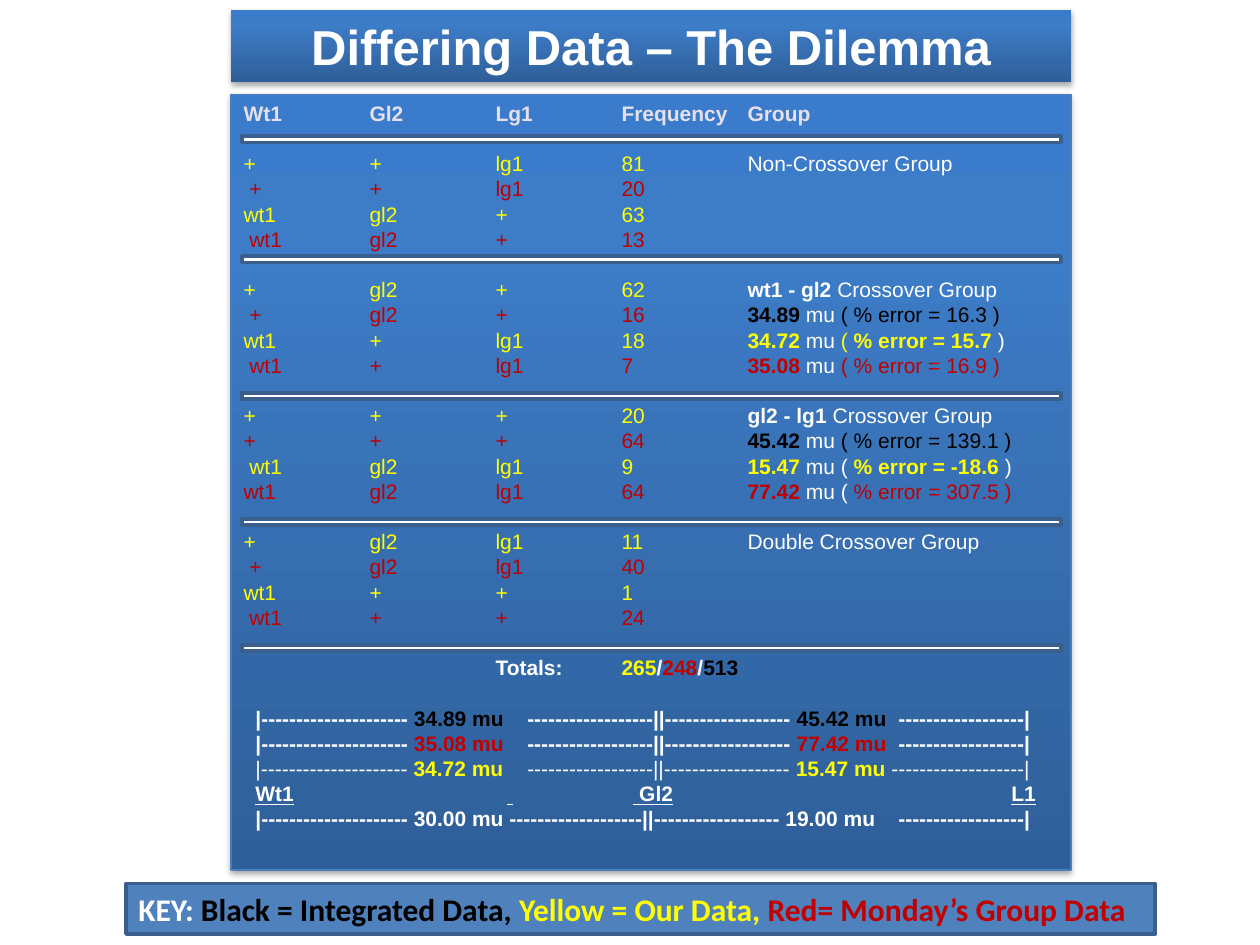
from copy import deepcopy
from lxml.etree import SubElement
from pptx import Presentation
from pptx.dml.color import RGBColor
from pptx.enum.shapes import MSO_SHAPE
from pptx.enum.text import MSO_ANCHOR, PP_ALIGN
from pptx.oxml.ns import qn
from pptx.util import Cm, Pt

WHITE = RGBColor(0xFF, 0xFF, 0xFF)
BLACK = RGBColor(0, 0, 0)
YELLOW = RGBColor(0xFF, 0xFF, 0)
RED = RGBColor(0xC0, 0, 0)
LAVENDER = RGBColor(0xE6, 0xE0, 0xEC)
BLUE = RGBColor(0x4F, 0x81, 0xBD)
EDGE = RGBColor(0x4B, 0x7E, 0xBC)
NAVY = RGBColor(0x3A, 0x5F, 0x8C)
GRADIENT = [(0, RGBColor(0x2F, 0x5F, 0x99)), (0.8, RGBColor(0x3D, 0x7C, 0xC7)),
            (1, RGBColor(0x3A, 0x7C, 0xCB))]

COLUMN_TABS = [2.54, 5.08, 7.62, 10.16]
MAP_TABS = [5.48, 12.96]
LINE_PITCH = Pt(14.4)


def add_span(para, text, color=WHITE, bold=False, underline=False, size=12, font="Arial"):
    span = para.add_run()
    span.text = text
    span.font.size, span.font.name = Pt(size), font
    span.font.bold, span.font.underline = bold, underline
    span.font.color.rgb = color


class Page:
    """Holds the current slide and the look of its elements."""

    def __init__(self, deck):
        self.slide = deck.slides.add_slide(deck.slide_layouts[6])

    def box(self, left, top, width, height, fill=None, line=None, line_width=2):
        box = self.slide.shapes.add_shape(
            MSO_SHAPE.RECTANGLE, Cm(left), Cm(top), Cm(width), Cm(height))
        box.shadow.inherit = False
        if fill is None:
            self.shade(box)
        else:
            box.fill.solid()
            box.fill.fore_color.rgb = fill
        if line is None:
            box.line.fill.background()
        else:
            box.line.color.rgb = line
            box.line.width = Pt(line_width)
        box.text_frame.word_wrap = True
        return box

    def shade(self, box):
        """Blue vertical gradient with a soft shadow below."""
        box.fill.gradient()
        box.fill.gradient_angle = 90
        properties = box._element.spPr
        stop_list = properties.find(".//" + qn("a:gsLst"))
        stop_list.append(deepcopy(stop_list[-1]))
        for stop, (position, color) in zip(box.fill.gradient_stops, GRADIENT):
            stop.position = position
            stop.color.rgb = color
        shadow = SubElement(properties.find(qn("a:effectLst")), qn("a:outerShdw"),
                            blurRad=str(Pt(3.1)), dist=str(Pt(1.8)),
                            dir="5400000", rotWithShape="0")
        color = SubElement(shadow, qn("a:srgbClr"), val="000000")
        SubElement(color, qn("a:alpha"), val="35000")

    def rule(self, top):
        self.box(4.88, top, 16.51, 0.13, WHITE, NAVY)

    def line(self, box, spans, tabs=(), align=PP_ALIGN.LEFT, gap=False, indent=0, pitch=None):
        """Adds one paragraph; each span is a (text, format) pair."""
        frame = box.text_frame
        first = not frame.paragraphs[0].runs
        para = frame.paragraphs[0] if first else frame.add_paragraph()
        para.alignment = align
        if pitch:
            para.line_spacing = pitch
        if gap:
            para.space_before = pitch
        properties = para._p.get_or_add_pPr()
        properties.set("marL", str(Cm(indent)))
        if tabs:
            tab_list = SubElement(properties, qn("a:tabLst"))
            for tab in tabs:
                SubElement(tab_list, qn("a:tab"), pos=str(Cm(tab)), algn="l")
        for text, style in spans:
            add_span(para, text, **style)


def plain(text, color=WHITE):
    return text, dict(color=color)


def strong(text, color=WHITE, **style):
    return text, dict(color=color, bold=True, **style)


# Each group: four genotype rows, with the notes that stand beside them
GROUPS = [
    [("+ + lg1 81", YELLOW, [plain("Non-Crossover Group")]),
     ("_+ + lg1 20", RED, []),
     ("wt1 gl2 + 63", YELLOW, []),
     ("_wt1 gl2 + 13", RED, [])],
    [("+ gl2 + 62", YELLOW, [strong("wt1 - gl2"), plain(" Crossover Group")]),
     ("_+ gl2 + 16", RED, [strong("34.89", BLACK), plain(" mu "),
                           plain("( % error = 16.3 )", BLACK)]),
     ("wt1 + lg1 18", YELLOW, [strong("34.72", YELLOW), plain(" mu "), plain("( ", YELLOW),
                               strong("% error = 15.7 ", YELLOW), plain(")")]),
     ("_wt1 + lg1 7", RED, [strong("35.08", RED), plain(" mu "),
                            plain("( % error = 16.9 )", RED)])],
    [("+ + + 20", YELLOW, [strong("gl2 - lg1"), plain(" Crossover Group")]),
     ("+ + + 64", RED, [strong("45.42", BLACK), plain(" mu "),
                        plain("( % error = 139.1 )", BLACK)]),
     ("_wt1 gl2 lg1 9", YELLOW, [strong("15.47", YELLOW), plain(" mu ( "),
                                 strong("% error = -18.6 ", YELLOW), plain(")")]),
     ("wt1 gl2 lg1 64", RED, [strong("77.42", RED), plain(" mu ( "),
                              plain("% error = 307.5 )", RED)])],
    [("+ gl2 lg1 11", YELLOW, [plain("Double Crossover Group")]),
     ("_+ gl2 lg1 40", RED, []),
     ("wt1 + + 1", YELLOW, []),
     ("_wt1 + + 24", RED, [])],
]


def map_row(first, second, color, ruler=strong, gaps="\t\t", dashes=(18, 18)):
    """One distance scale: two values set between dashed rulers."""
    return [ruler("|" + "-" * 21 + " "), strong(first + " mu", color),
            ruler(gaps[0] + "-" * dashes[0] + "||" + "-" * 18 + " "),
            strong(second + " mu", color), ruler(gaps[1] + "-" * dashes[1] + "|")]


MAP_ROWS = [
    map_row("34.89", "45.42", BLACK),
    map_row("35.08", "77.42", RED),
    map_row("34.72", "15.47", YELLOW, ruler=plain, gaps="\t ", dashes=(18, 19)),
    [strong("Wt1\t\t \t Gl2\t\t\tL1", underline=True)],
    map_row("30.00", "19.00", WHITE, gaps=" \t", dashes=(19, 18)),
]


def main():
    deck = Presentation()
    deck.slide_width, deck.slide_height = Cm(25.4), Cm(19.05)
    page = Page(deck)

    # Title
    title = page.box(4.66, 0.2, 16.93, 1.45)
    page.line(title, [strong("Differing Data – The Dilemma", size=28)], align=PP_ALIGN.CENTER)

    # Data panel
    panel = page.box(4.66, 1.9, 16.93, 15.64, line=EDGE, line_width=0.75)
    panel.text_frame.vertical_anchor = MSO_ANCHOR.TOP
    columns = dict(tabs=COLUMN_TABS, pitch=LINE_PITCH)
    page.line(panel, [strong("Wt1\tGl2\tLg1\tFrequency\tGroup", LAVENDER)], **columns)
    for group in GROUPS:
        for number, (cells, color, notes) in enumerate(group):
            text = cells.replace(" ", "\t").replace("_", " ")
            if notes:
                text += "\t"
            page.line(panel, [plain(text, color)] + notes, gap=number == 0, **columns)
    page.line(panel, [strong("\t\tTotals:\t"), strong("265", YELLOW), strong("/"),
                      strong("248", RED), strong("/"), strong("513", BLACK)],
              gap=True, **columns)

    # Distance map
    for number, spans in enumerate(MAP_ROWS):
        tabs = [2.54 * step for step in range(1, 7)] if len(spans) == 1 else MAP_TABS
        page.line(panel, spans, tabs=tabs, gap=number == 0, indent=0.24, pitch=LINE_PITCH)

    # Rules between groups
    for top in (2.74, 5.16, 7.92, 10.46, 13):
        page.rule(top)

    # Colour key
    key = page.box(2.54, 17.81, 20.75, 1.02, BLUE, NAVY)
    page.line(key, [strong(text, color, size=18, font="Calibri") for text, color in (
        ("KEY: ", WHITE), ("Black = Integrated Data, ", BLACK),
        ("Yellow = Our Data, ", YELLOW), ("Red= Monday’s Group Data", RED))])

    deck.save("out.pptx")


if __name__ == "__main__":
    main()
